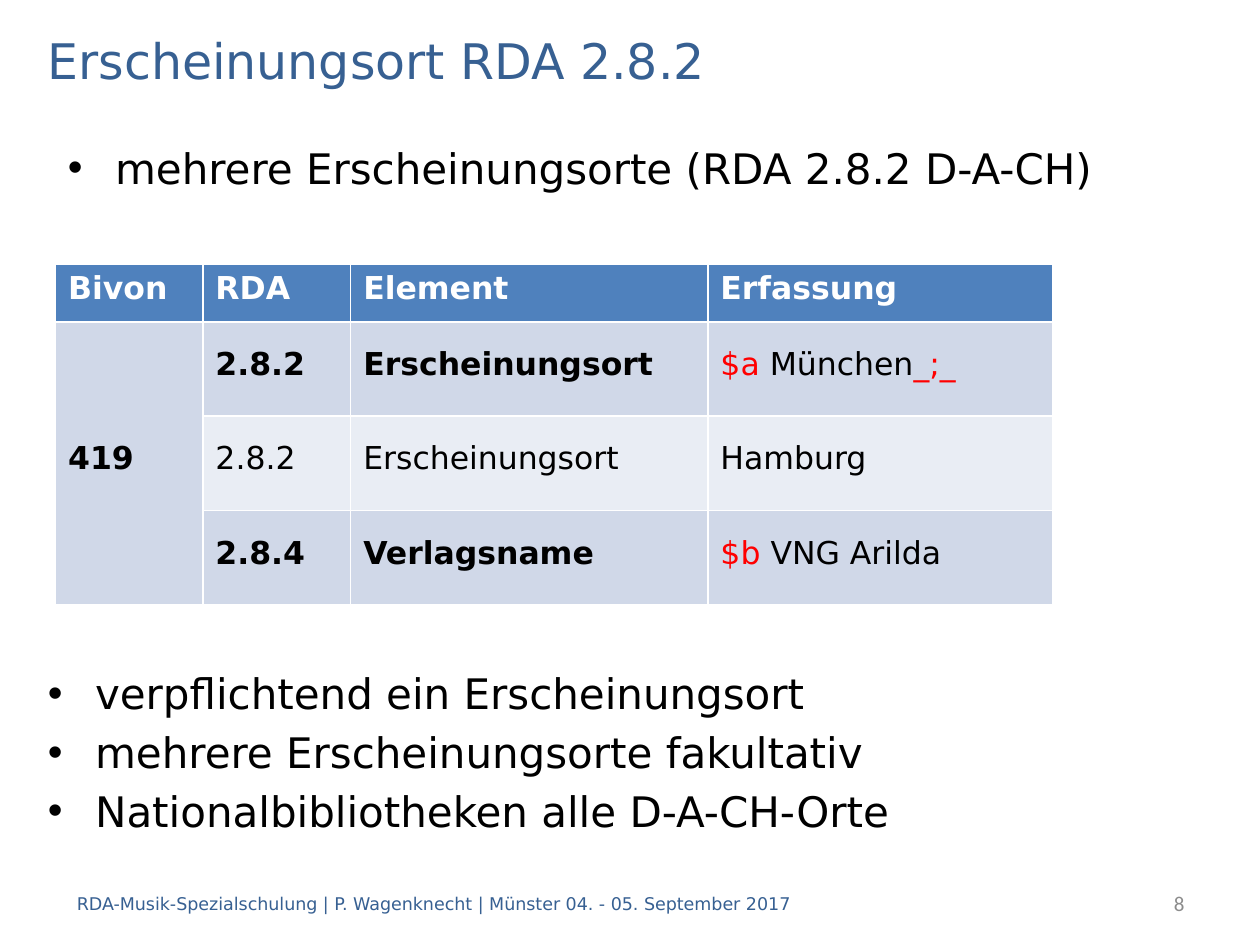
from lxml.etree import SubElement
from pptx import Presentation
from pptx.dml.color import RGBColor
from pptx.enum.text import MSO_ANCHOR, MSO_AUTO_SIZE, PP_ALIGN
from pptx.oxml.ns import qn
from pptx.util import Cm, Pt

COLORS = {
    "title": "376092", "text": "000000", "number": "8C8C8C", "code": "FF0000",
    "white": "FFFFFF", "head": "4F81BD", "dark": "D0D8E8", "light": "E9EDF4",
}
FONT = "DejaVu Sans"
COLS = [2.97, 2.98, 7.2, 6.96]
ROWS = [1.16, 1.9, 1.9, 1.9]
HEADS = ["Bivon", "RDA", "Element", "Erfassung"]
# Each entry: bold labels, labels, then the recorded text as (text, colour) runs
ENTRIES = [
    (True, ["419", "2.8.2", "Erscheinungsort"],
     [("$a", "code"), (" München", "text"), ("_;_", "code")]),
    (False, ["", "2.8.2", "Erscheinungsort"], [("Hamburg", "text")]),
    (True, ["", "2.8.4", "Verlagsname"],
     [("$b", "code"), (" VNG Arilda", "text")]),
]


def rgb(name):
    return RGBColor.from_string(COLORS[name])


def style(para, size, color, bold=False, face=FONT):
    font = para.font
    font.name, font.size, font.bold = face, Pt(size), bold
    font.color.rgb = rgb(color)


def place(shape, left, top, width, height):
    shape.left, shape.top = Cm(left), Cm(top)
    shape.width, shape.height = Cm(width), Cm(height)


def fill_frame(frame, lines, size, color, face=FONT):
    frame.word_wrap = True
    frame.auto_size = MSO_AUTO_SIZE.NONE
    frame.text = "\n".join(lines)
    for para in frame.paragraphs:
        style(para, size, color, face=face)


def add_text(slide, box, text, size, color, face=FONT):
    shape = slide.shapes.add_textbox(*map(Cm, box))
    fill_frame(shape.text_frame, [text], size, color, face)
    return shape.text_frame


def add_bullet(para):
    """Give a text box paragraph the indent and bullet of the body list."""
    para.space_before = Pt(5)
    props = para._p.get_or_add_pPr()
    props.set("marL", str(Cm(0.95)))
    props.set("indent", str(Cm(-0.95)))
    last = props.find(qn("a:defRPr"))
    for tag, key, value in (("a:buFont", "typeface", "Arial"),
                            ("a:buChar", "char", "•")):
        last.addprevious(SubElement(props, qn(tag), {key: value}))


def fill_cell(cell, runs, fill, color="text", bold=False):
    cell.fill.solid()
    cell.fill.fore_color.rgb = rgb(fill)
    para = cell.text_frame.paragraphs[0]
    style(para, 18, color, bold)
    for text, tint in runs:
        run = para.add_run()
        run.text = text
        run.font.color.rgb = rgb(tint)
    return para


def add_grid(slide):
    grid = slide.shapes.add_table(
        len(ROWS), len(COLS), Cm(1.12), Cm(5.33), Cm(sum(COLS)), Cm(sum(ROWS))
    ).table
    for col, width in zip(grid.columns, COLS):
        col.width = Cm(width)
    for row, height in zip(grid.rows, ROWS):
        row.height = Cm(height)
    for c, head in enumerate(HEADS):
        fill_cell(grid.cell(0, c), [(head, "white")], "head", "white", True)
    for r, (bold, labels, record) in enumerate(ENTRIES, 1):
        cells = [[(label, "text")] if label else [] for label in labels]
        for c, runs in enumerate(cells + [record]):
            cell = grid.cell(r, c)
            cell.vertical_anchor = MSO_ANCHOR.MIDDLE
            para = fill_cell(cell, runs, "dark" if r % 2 else "light",
                             bold=bold and c < len(labels))
            para.line_spacing = Pt(16)
            para.space_before = para.space_after = Pt(6)
    grid.cell(1, 0).merge(grid.cell(3, 0))


def main():
    deck = Presentation()
    deck.slide_width, deck.slide_height = Cm(25.4), Cm(19.05)
    slide = deck.slides.add_slide(deck.slide_layouts[1])

    title, body = slide.placeholders
    place(title, 0.71, 0.5, 24, 1.42)
    fill_frame(title.text_frame, ["Erscheinungsort RDA 2.8.2"], 28, "title")
    title.text_frame.paragraphs[0].alignment = PP_ALIGN.LEFT

    place(body, 0.71, 13.33, 24, 3.4)
    fill_frame(body.text_frame, [
        "verpflichtend ein Erscheinungsort",
        "mehrere Erscheinungsorte fakultativ",
        "Nationalbibliotheken alle D-A-CH-Orte",
    ], 24, "text")

    foot = add_text(
        slide, (1.3, 17.7, 21.21, 1.02),
        "RDA-Musik-Spezialschulung | P. Wagenknecht | "
        "Münster 04. - 05. September 2017", 10, "title")
    number = add_text(slide, (20.09, 17.7, 4.04, 1.02), "8", 12, "number",
                      "Calibri")
    number.paragraphs[0].alignment = PP_ALIGN.RIGHT
    foot.vertical_anchor = number.vertical_anchor = MSO_ANCHOR.MIDDLE

    intro = add_text(slide, (1.12, 2.74, 24, 1.8),
                     "mehrere Erscheinungsorte (RDA 2.8.2 D-A-CH)", 24, "text")
    add_bullet(intro.paragraphs[0])
    add_grid(slide)
    deck.save("out.pptx")


if __name__ == "__main__":
    main()
